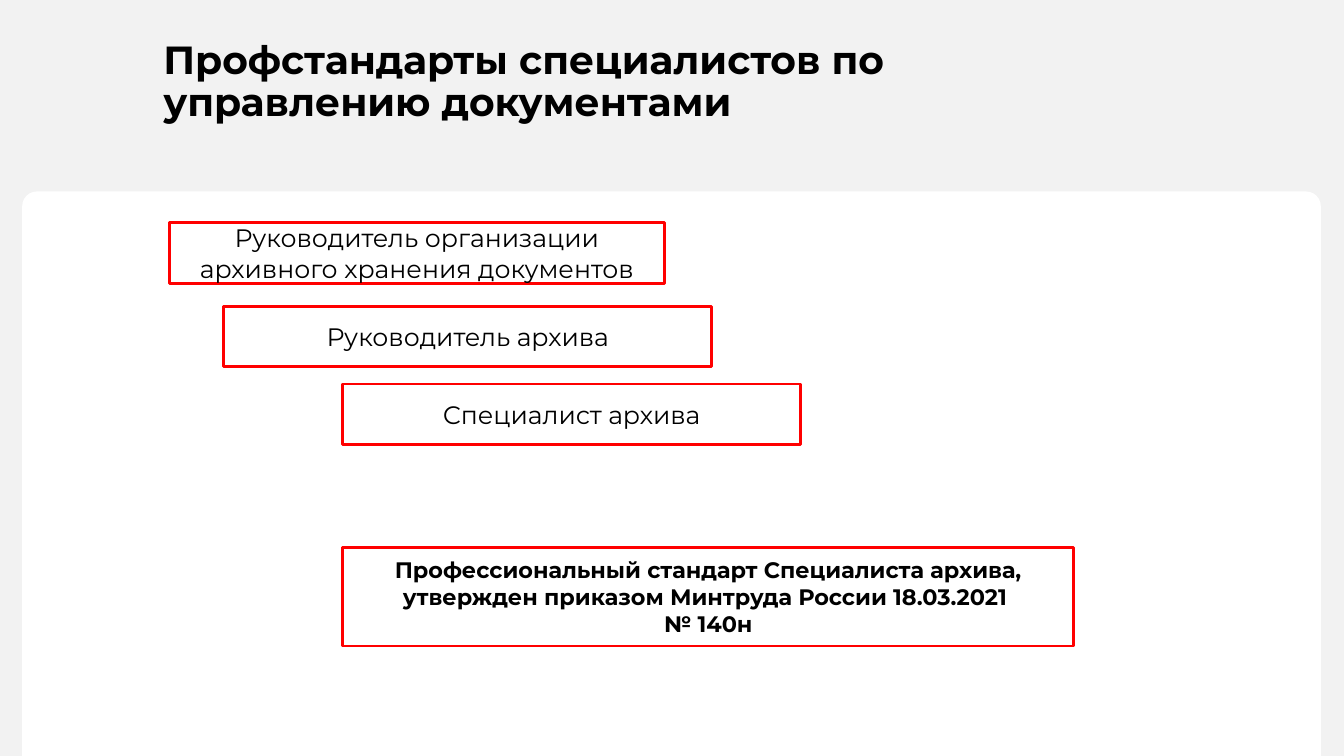
from pptx import Presentation
from pptx.dml.color import RGBColor
from pptx.enum.shapes import MSO_SHAPE as Shape
from pptx.enum.text import MSO_ANCHOR as Anchor, PP_ALIGN as Align
from pptx.util import Inches, Pt


def color(value):
    return RGBColor.from_string(value)


class SlideBuilder:
    font = "Montserrat"
    ink = "000000"
    accent = "FF0000"
    paper = "FFFFFF"
    backdrop = "F2F2F2"

    def __init__(self, deck):
        self.page = deck.slides.add_slide(deck.slide_layouts[5])
        fill = self.page.background.fill
        fill.solid()
        fill.fore_color.rgb = color(self.backdrop)

    def set_text(self, frame, lines, size, bold, align):
        frame.word_wrap = True
        frame.vertical_anchor = Anchor.MIDDLE
        frame.text = "\n".join(lines)
        for para in frame.paragraphs:
            para.alignment = align
            para.font.name = self.font
            para.font.size = Pt(size)
            para.font.bold = bold
            para.font.color.rgb = color(self.ink)

    def title(self, text, left, top, width, height):
        box = self.page.shapes.title
        box.left, box.top = Inches(left), Inches(top)
        box.width, box.height = Inches(width), Inches(height)
        self.set_text(box.text_frame, [text], 28, True, Align.LEFT)
        box.text_frame.paragraphs[0].line_spacing = 0.9

    def shape(self, kind, left, top, width, height):
        box = self.page.shapes.add_shape(
            kind, Inches(left), Inches(top), Inches(width), Inches(height))
        box.shadow.inherit = False
        return box

    def panel(self, left, top, width, height):
        box = self.shape(Shape.ROUND_2_SAME_RECTANGLE, left, top, width, height)
        box.adjustments[0] = 0.026
        box.fill.solid()
        box.fill.fore_color.rgb = color(self.paper)
        box.line.fill.background()

    def outlined_box(self, lines, left, top, width, height, size=18, bold=False):
        box = self.shape(Shape.RECTANGLE, left, top, width, height)
        box.fill.background()
        box.line.color.rgb = color(self.accent)
        box.line.width = Pt(2)
        self.set_text(box.text_frame, lines, size, bold, Align.CENTER)


def main():
    deck = Presentation()
    deck.slide_width, deck.slide_height = Inches(13.33), Inches(7.5)
    slide = SlideBuilder(deck)

    # Heading and white panel
    slide.panel(0.22, 1.9, 12.88, 5.6)
    slide.title("Профстандарты специалистов по управлению документами",
                1.52, 0.35, 9.02, 0.94)

    # Staircase of positions
    positions = [
        ("Руководитель организации архивного хранения документов", 1.68, 2.21, 4.91),
        ("Руководитель архива", 2.22, 3.04, 4.84),
        ("Специалист архива", 3.4, 3.81, 4.54),
    ]
    for name, left, top, width in positions:
        slide.outlined_box([name], left, top, width, 0.6)

    # Governing standard
    slide.outlined_box(
        ["Профессиональный стандарт Специалиста архива, "
         "утвержден приказом Минтруда России 18.03.2021 ",
         "№ 140н"],
        3.4, 5.43, 7.25, 0.98, size=16, bold=True)

    deck.save("out.pptx")


if __name__ == "__main__":
    main()
